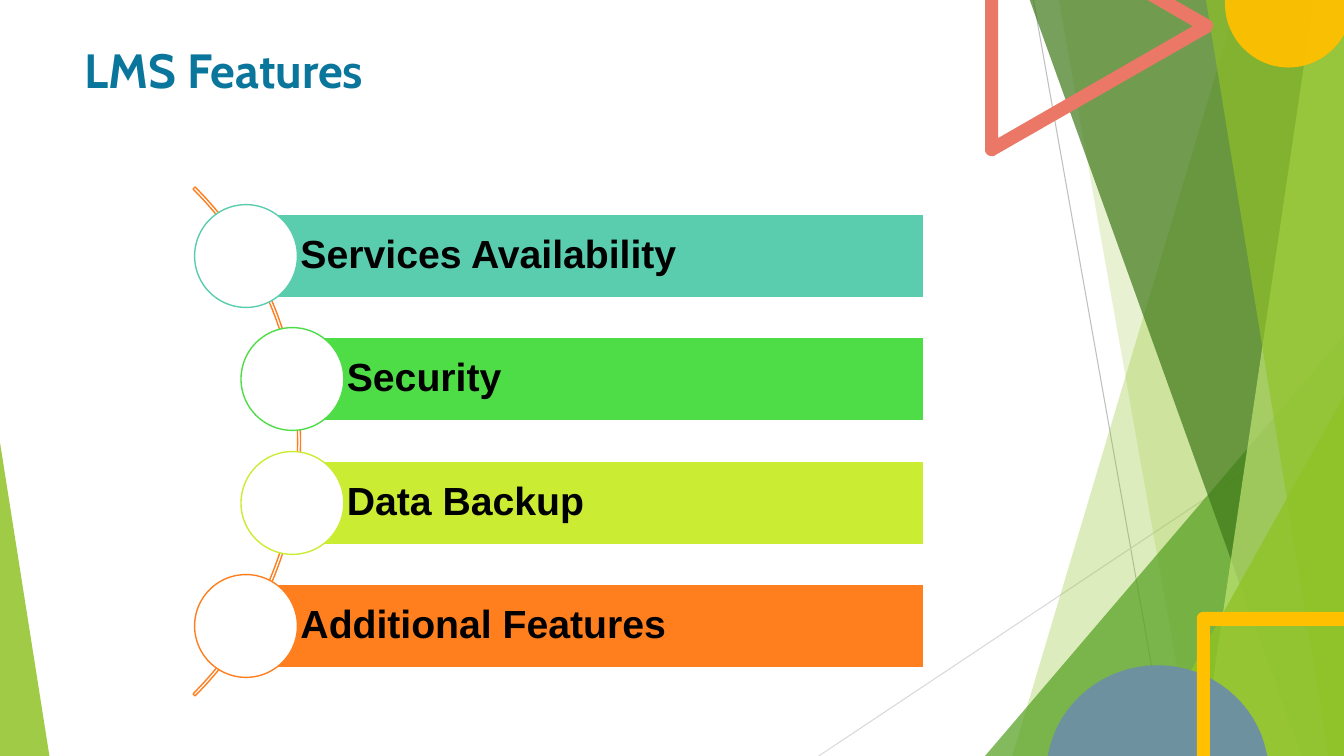
"""Build the LMS features slide."""
import dataclasses
import typing

import lxml.etree
import pptx
import pptx.dml.color
import pptx.enum.shapes
import pptx.enum.text
import pptx.oxml.ns
import pptx.util

PX = 9144
WIDE, HIGH = 1333, 750
KIND = pptx.enum.shapes.MSO_SHAPE
Point = tuple[float, float]


@dataclasses.dataclass(frozen=True)
class Theme:
    white: str = "FFFFFF"
    ink: str = "000000"
    head: str = "0B769C"
    lime: str = "90C226"
    green: str = "54A021"
    moss: str = "3F7819"
    pale: str = "C0E474"
    slate: str = "6E91A0"
    gold: str = "FFC000"
    coral: str = "EB7766"
    arc: str = "FE7F20"
    gray: str = "BFBFBF"
    mist: str = "D9D9D9"
    teal: str = "5BCDAF"
    grass: str = "4FDD47"
    lemon: str = "CAED34"
    orange: str = "FF7F1F"
    title: float = 34.3
    label: float = 28
    thin: float = 0.75
    edge: float = 1


T = Theme()


class Box(typing.NamedTuple):
    left: int
    top: int
    wide: int
    high: int


@dataclasses.dataclass(frozen=True)
class Ray:
    start: Point
    end: Point
    color: str


@dataclasses.dataclass(frozen=True)
class Wedge:
    box: Box
    tip: float
    color: str
    alpha: int


@dataclasses.dataclass(frozen=True)
class Patch:
    steps: tuple[tuple[int, ...], ...]
    color: str
    alpha: int = 100


@dataclasses.dataclass(frozen=True)
class Item:
    text: str
    color: str
    left: int


RAYS = (
    Ray((1025, 0), (1158, HIGH), T.gray),
    Ray((WIDE, 403), (812, HIGH), T.mist),
)


def strip(top: int, foot: int, color: str, alpha: int) -> Patch:
    """Make a band between a slanted left side and the right edge."""
    return Patch(((top, -1), (WIDE, -1), (WIDE, HIGH), (foot, HIGH)), color, alpha)


DECOR: tuple[Wedge | Patch, ...] = (
    strip(1228, 1004, T.lime, 30),
    strip(1050, 1183, T.lime, 20),
    Wedge(Box(977, 333, 356, 417), 1, T.green, 72),
    strip(1021, 1291, T.moss, 70),
    strip(1303, 1192, T.pale, 70),
    strip(1196, 1318, T.lime, 65),
    Wedge(Box(1134, 393, 199, 357), 1, T.lime, 80),
    Wedge(Box(0, 439, 49, 311), 0, T.lime, 85),
    Patch(((1148, 660), (1201, 660, 1246, 697, 1256, 746), (1257, 750),
           (1039, 750), (1040, 746), (1050, 697, 1095, 660, 1148, 660)), T.slate),
    Patch(((1215, -2), (1341, -2), (1341, 4), (1341, 38, 1313, 67, 1278, 67),
           (1243, 67, 1215, 38, 1215, 4)), T.gold, 95),
    Patch(((977, -22), (990, -22), (990, 137), (1183, 26), (1100, -22),
           (1127, -22), (1200, 20), (1203, 22, 1204, 26, 1202, 29),
           (1201, 30, 1201, 31, 1200, 32), (987, 154),
           (986, 155, 985, 155, 984, 155), (980, 155, 977, 152, 977, 149)), T.coral),
    Patch(((1194, 607), (1333, 607), (1333, 621), (1200, 621), (1200, 754),
           (1187, 754), (1187, 614), (1187, 610, 1190, 607, 1194, 607)), T.gold),
)

ITEMS = (
    Item("Services Availability", T.teal, 244),
    Item("Security", T.grass, 290),
    Item("Data Backup", T.lemon, 290),
    Item("Additional Features", T.orange, 244),
)


def tint(code: str) -> pptx.dml.color.RGBColor:
    """Turn a hex code into a colour."""
    return pptx.dml.color.RGBColor.from_string(code)


def paint(shape: typing.Any, fill: str = "", line: str = "", alpha: int = 100) -> None:
    """Set the fill, line and opacity of a shape."""
    shape.shadow.inherit = False
    if fill:
        shape.fill.solid()
        shape.fill.fore_color.rgb = tint(fill)
    else:
        shape.fill.background()
    if alpha < 100:
        tag = pptx.oxml.ns.qn("a:srgbClr")
        node = next(shape.element.spPr.iter(tag))
        lxml.etree.SubElement(node, pptx.oxml.ns.qn("a:alpha"), val=str(alpha * 1000))
    if line:
        shape.line.color.rgb = tint(line)
        shape.line.width = pptx.util.Pt(T.edge)
    else:
        shape.line.fill.background()


def place(slide: typing.Any, kind: typing.Any, box: Box) -> typing.Any:
    """Add a preset shape at a box."""
    return slide.shapes.add_shape(kind, *(PX * v for v in box))


def write(shape: typing.Any, text: str, font: str, size: float, color: str,
          pads: tuple[int, int, int, int]) -> None:
    """Put one bold line of text in a shape."""
    frame = shape.text_frame
    frame.text = text
    frame.word_wrap = True
    frame.vertical_anchor = pptx.enum.text.MSO_ANCHOR.MIDDLE
    (frame.margin_left, frame.margin_top,
     frame.margin_right, frame.margin_bottom) = (PX * v for v in pads)
    para = frame.paragraphs[0]
    para.alignment = pptx.enum.text.PP_ALIGN.LEFT
    para.line_spacing = 0.9
    face = para.runs[0].font
    face.name, face.size, face.bold = font, pptx.util.Pt(size), True
    face.color.rgb = tint(color)


def trace(steps: tuple[tuple[int, ...], ...], parts: int = 16) -> list[Point]:
    """Turn line and cubic curve steps into points."""
    points: list[Point] = []
    for step in steps:
        if len(step) == 2:
            points.append((step[0], step[1]))
            continue
        a, b = points[-1]
        c, d, e, f, g, h = step
        for n in range(1, parts + 1):
            t = n / parts
            u = 1 - t
            w = (u ** 3, 3 * u * u * t, 3 * u * t * t, t ** 3)
            points.append((w[0] * a + w[1] * c + w[2] * e + w[3] * g,
                           w[0] * b + w[1] * d + w[2] * f + w[3] * h))
    return points


def draw_ray(slide: typing.Any, ray: Ray) -> None:
    """Draw a thin straight line."""
    ends = (round(PX * v) for v in ray.start + ray.end)
    line = slide.shapes.add_connector(pptx.enum.shapes.MSO_CONNECTOR.STRAIGHT, *ends)
    line.line.color.rgb = tint(ray.color)
    line.line.width = pptx.util.Pt(T.thin)
    lxml.etree.SubElement(line.element.spPr, pptx.oxml.ns.qn("a:effectLst"))


def draw_decor(slide: typing.Any, part: Wedge | Patch) -> None:
    """Draw a triangle or a free outline."""
    if isinstance(part, Wedge):
        shape = place(slide, KIND.ISOSCELES_TRIANGLE, part.box)
        shape.adjustments[0] = part.tip
    else:
        first, *rest = [(PX * x, PX * y) for x, y in trace(part.steps)]
        pen = slide.shapes.build_freeform(*first)
        pen.add_line_segments(rest, close=True)
        shape = pen.convert_to_shape()
    paint(shape, part.color, alpha=part.alpha)


def draw_item(slide: typing.Any, item: Item, top: int) -> None:
    """Draw a labelled bar with its circle."""
    bar = place(slide, KIND.RECTANGLE, Box(item.left, top, 916 - item.left, 82))
    paint(bar, item.color, T.white)
    write(bar, item.text, "Arial", T.label, T.ink, (54, 4, 4, 4))
    disc = place(slide, KIND.OVAL, Box(item.left - 51, top - 10, 102, 102))
    paint(disc, T.white, item.color)


def main() -> None:
    """Build and save the slide."""
    deck = pptx.Presentation()
    deck.slide_width, deck.slide_height = WIDE * PX, HIGH * PX
    slide = deck.slides.add_slide(deck.slide_layouts[6])
    for ray in RAYS:
        draw_ray(slide, ray)
    for part in DECOR:
        draw_decor(slide, part)
    title = slide.shapes.add_textbox(*(PX * v for v in Box(74, 31, 940, 82)))
    write(title, "LMS Features", "Cabin", T.title, T.head, (10, 5, 10, 5))
    arc = place(slide, KIND.BLOCK_ARC, Box(-416, 81, 714, 714))
    for n, value in enumerate((189, 27, 0.004)):
        arc.adjustments[n] = value
    paint(arc, line=T.arc)
    for n, item in enumerate(ITEMS):
        draw_item(slide, item, round(213 + n * 122.4))
    deck.save("out.pptx")


if __name__ == "__main__":
    main()
